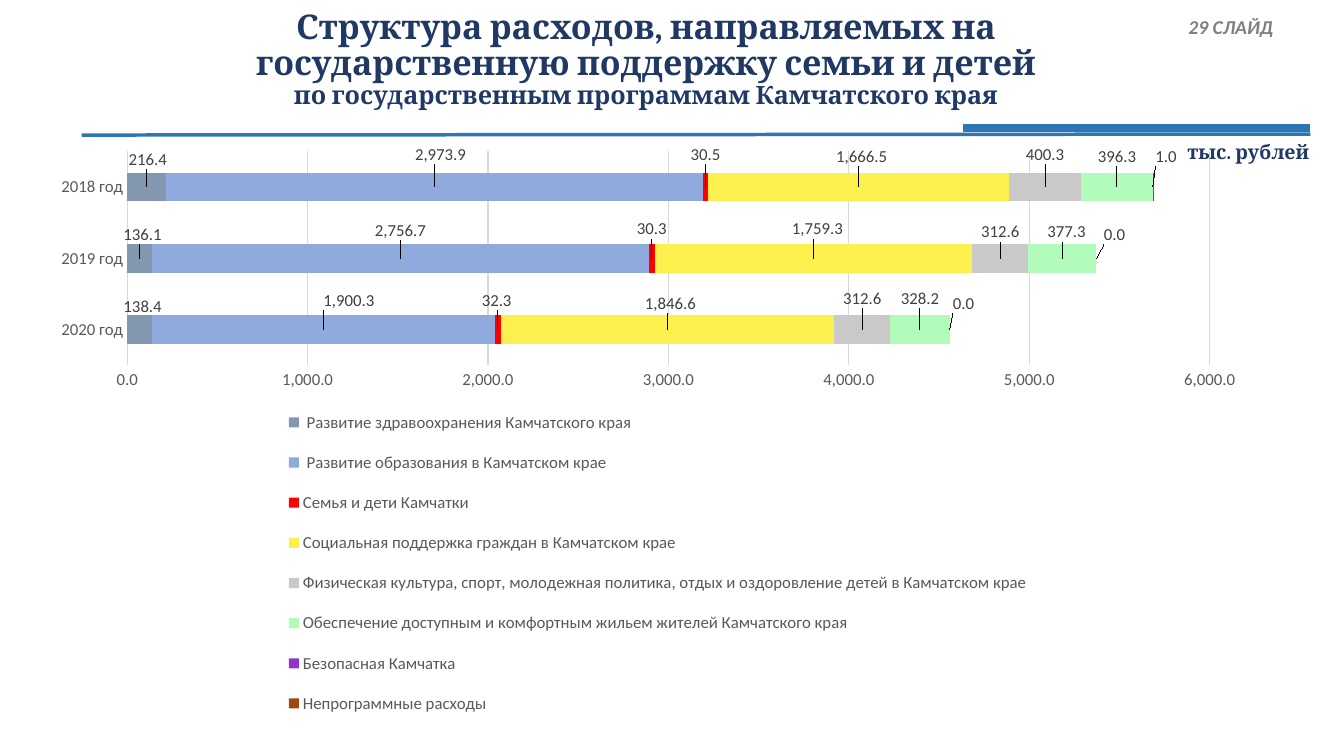
from dataclasses import dataclass
from typing import NamedTuple

from pptx import Presentation
from pptx.chart.data import CategoryChartData
from pptx.chart.chart import Chart
from pptx.dml.color import RGBColor
from pptx.enum.chart import XL_CHART_TYPE, XL_LABEL_POSITION, XL_LEGEND_POSITION, XL_TICK_MARK
from pptx.enum.text import MSO_ANCHOR, MSO_AUTO_SIZE, PP_ALIGN
from pptx.oxml import parse_xml
from pptx.oxml.ns import nsdecls, qn
from pptx.slide import Slide
from pptx.util import Emu, Inches, Pt


@dataclass(frozen=True)
class Theme:
    navy: str = "203864"
    blue: str = "2E75B6"
    slide_number: str = "808080"
    axis: str = "595959"
    label: str = "404040"
    grid: str = "D9D9D9"
    heading: str = "Cambria"
    body: str = "Calibri"
    title_size: float = 24.3
    subtitle_size: float = 18
    note_size: float = 14
    chart_size: float = 12


class Area(NamedTuple):
    column: float
    row: float
    columns: float
    rows: float


class Rule(NamedTuple):
    start: tuple[float, float]
    end: tuple[float, float]
    weight: float


class Shares(NamedTuple):
    x: float
    y: float
    w: float
    h: float


class Programme(NamedTuple):
    name: str
    spending: tuple[float, ...]
    color: str
    label_shifts: tuple[tuple[float, float], ...] = ()


THEME = Theme()
WIDTH, HEIGHT = Inches(13.33), Inches(7.5)
COLUMN, ROW = WIDTH / 40, HEIGHT / 30
NUMBER_FORMAT = "#,##0.0"

TITLE = Area(1.23, 0, 36, 4.76)
SPENDING = Area(1.23, 5.4, 36, 24.2)
UNIT = Area(35.04, 5.36, 4.38, 1.56)
SLIDE_NUMBER = Area(34.83, 0.4, 3.54, 1.36)
PLOT = Shares(0.071, 0.025, 0.895, 0.351)
LEGEND = Shares(0.19, 0.42, 0.64, 0.56)
RULES = (
    Rule((2.43, 5.36), (39, 5.32), 2.5),
    Rule((28.65, 5.08), (39, 5.08), 6),
)
YEARS = ("2020 год", "2019 год", "2018 год")
# label shifts: percent of the chart's width and height
PROGRAMMES = (
    Programme(" Развитие здравоохранения Камчатского края", (138.4, 136.1, 216.4), "8497B0",
              ((0.25, -3.8), (0.25, -3.9), (0.1, -4.5))),
    Programme(" Развитие образования в Камчатском крае", (1900.3, 2756.7, 2973.9), "8FAADC",
              ((2.1, -4.8), (0, -4.5), (0.5, -5.3))),
    Programme("Семья и дети Камчатки", (32.3, 30.3, 30.5), "FF0000",
              ((-0.1, -4.8), (0, -4.8), (0, -5.3))),
    Programme("Социальная поддержка граждан в Камчатском крае", (1846.6, 1759.3, 1666.5), "FCF04E",
              ((0.25, -4.3), (0.35, -4.8), (0.25, -5))),
    Programme("Физическая культура, спорт, молодежная политика, отдых и оздоровление детей "
              "в Камчатском крае", (312.6, 312.6, 400.3), "C9C9C9",
              ((0, -5.1), (0, -4.3), (0, -5.3))),
    Programme("Обеспечение доступным и комфортным жильем жителей Камчатского края",
              (328.2, 377.3, 396.3), "B2FCBB", ((0, -5.1), (0.35, -4.3), (0, -5))),
    Programme("Безопасная Камчатка", (0, 0, 0), "9234CC"),
    Programme("Непрограммные расходы", (0, 0, 1), "9E480E",
              ((1.15, -4.3), (1.5, -3.9), (1.1, -5))),
)


def place(area: Area) -> tuple[Emu, Emu, Emu, Emu]:
    return (Emu(round(area.column * COLUMN)), Emu(round(area.row * ROW)),
            Emu(round(area.columns * COLUMN)), Emu(round(area.rows * ROW)))


def set_font(font, size: float, color: str, name: str = THEME.body,
             bold: bool = False, italic: bool = False) -> None:
    font.size, font.name, font.bold, font.italic = Pt(size), name, bold, italic
    font.color.rgb = RGBColor.from_string(color)


def write(paragraph, text: str, **text_format) -> None:
    run = paragraph.add_run()
    run.text = text
    set_font(run.font, **text_format)


def add_note(slide: Slide, area: Area, text: str, indent: float = 0.1, **text_format) -> None:
    frame = slide.shapes.add_textbox(*place(area)).text_frame
    frame.word_wrap = False
    frame.margin_left = Inches(indent)
    write(frame.paragraphs[0], text, size=THEME.note_size, bold=True, **text_format)


def add_title(slide: Slide) -> None:
    heading = slide.shapes.title
    heading.left, heading.top, heading.width, heading.height = place(TITLE)
    frame = heading.text_frame
    frame.auto_size, frame.vertical_anchor = MSO_AUTO_SIZE.NONE, MSO_ANCHOR.MIDDLE
    paragraph = frame.paragraphs[0]
    paragraph.alignment, paragraph.line_spacing = PP_ALIGN.CENTER, 0.9
    lines = (
        ("Структура расходов, направляемых на", THEME.title_size),
        ("государственную поддержку семьи и детей", THEME.title_size),
        ("по государственным программам Камчатского края", THEME.subtitle_size),
    )
    for index, (text, size) in enumerate(lines):
        if index:
            paragraph.add_line_break()
        write(paragraph, text, size=size, color=THEME.navy, name=THEME.heading, bold=True)


def add_rule(slide: Slide, rule: Rule) -> None:
    ends = [round(share * unit) for point in (rule.start, rule.end)
            for share, unit in zip(point, (COLUMN, ROW))]
    connector = slide.shapes.add_connector(1, *map(Emu, ends))
    connector.line.width = Pt(rule.weight)
    connector.line.color.rgb = RGBColor.from_string(THEME.blue)
    connector._element.spPr.append(parse_xml(f"<a:effectLst {nsdecls('a')}/>"))


def set_layout(element, position: int, shares: Shares, inner: bool = False) -> None:
    for previous in element.findall(qn("c:layout")):
        element.remove(previous)
    target = '<c:layoutTarget val="inner"/>' if inner else ""
    modes = "".join(f'<c:{axis}Mode val="edge"/>' for axis in "xy")
    sizes = "".join(f'<c:{key} val="{value}"/>' for key, value in shares._asdict().items())
    element.insert(position, parse_xml(
        f"<c:layout {nsdecls('c')}><c:manualLayout>{target}{modes}{sizes}"
        "</c:manualLayout></c:layout>"))


def add_labels(series, shifts: tuple[tuple[float, float], ...]) -> None:
    labels = series.data_labels
    labels.show_value = True
    labels.number_format, labels.number_format_is_linked = NUMBER_FORMAT, False
    set_font(labels.font, THEME.chart_size, THEME.label)
    for index in range(len(shifts)):
        label = series.points[index].data_label
        set_font(label.font, THEME.chart_size, THEME.label)
        label.position = XL_LABEL_POSITION.CENTER
    for element, (x, y) in zip(labels._element.findall(qn("c:dLbl")), shifts):
        element.insert(1, parse_xml(
            f"<c:layout {nsdecls('c')}><c:manualLayout><c:x val=\"{x / 100:.4f}\"/>"
            f"<c:y val=\"{y / 100:.4f}\"/></c:manualLayout></c:layout>"))
        element.insert(2, parse_xml(
            f"<c:numFmt {nsdecls('c')} formatCode=\"{NUMBER_FORMAT}\" sourceLinked=\"0\"/>"))


def format_axes(chart: Chart) -> None:
    for axis in (chart.category_axis, chart.value_axis):
        axis.major_tick_mark = axis.minor_tick_mark = XL_TICK_MARK.NONE
        axis.format.line.fill.background()
        set_font(axis.tick_labels.font, THEME.chart_size, THEME.axis)
    chart.category_axis.has_major_gridlines = False
    values = chart.value_axis
    values.minimum_scale, values.maximum_scale, values.major_unit = 0, 6000, 1000
    values.tick_labels.number_format = NUMBER_FORMAT
    values.tick_labels.number_format_is_linked = False
    values.has_major_gridlines = True
    values.major_gridlines.format.line.width = Pt(0.75)
    values.major_gridlines.format.line.color.rgb = RGBColor.from_string(THEME.grid)


def add_spending(slide: Slide) -> None:
    data = CategoryChartData(number_format=NUMBER_FORMAT)
    data.categories = YEARS
    for programme in PROGRAMMES:
        data.add_series(programme.name, programme.spending)
    chart = slide.shapes.add_chart(XL_CHART_TYPE.BAR_STACKED, *place(SPENDING), data).chart
    chart.has_title = False
    set_font(chart.font, 10, "000000")
    plot = chart.plots[0]
    plot.gap_width, plot.overlap, plot.vary_by_categories = 150, 100, False
    for series, programme in zip(plot.series, PROGRAMMES):
        series.format.fill.solid()
        series.format.fill.fore_color.rgb = RGBColor.from_string(programme.color)
        if programme.label_shifts:
            add_labels(series, programme.label_shifts)
    format_axes(chart)
    chart.has_legend = True
    legend = chart.legend
    legend.position, legend.include_in_layout = XL_LEGEND_POSITION.BOTTOM, False
    set_font(legend.font, THEME.chart_size, THEME.axis)
    set_layout(legend._element, 1, LEGEND)
    set_layout(chart._chartSpace.chart.plotArea, 0, PLOT, inner=True)


def main() -> None:
    deck = Presentation()
    deck.slide_width, deck.slide_height = WIDTH, HEIGHT
    slide = deck.slides.add_slide(deck.slide_layouts.get_by_name("Title Only"))
    add_title(slide)
    add_spending(slide)
    add_note(slide, UNIT, "тыс. рублей", color=THEME.navy, name=THEME.heading)
    add_note(slide, SLIDE_NUMBER, "29 СЛАЙД", indent=0.18, color=THEME.slide_number, italic=True)
    for rule in RULES:
        add_rule(slide, rule)
    deck.save("out.pptx")


if __name__ == "__main__":
    main()
